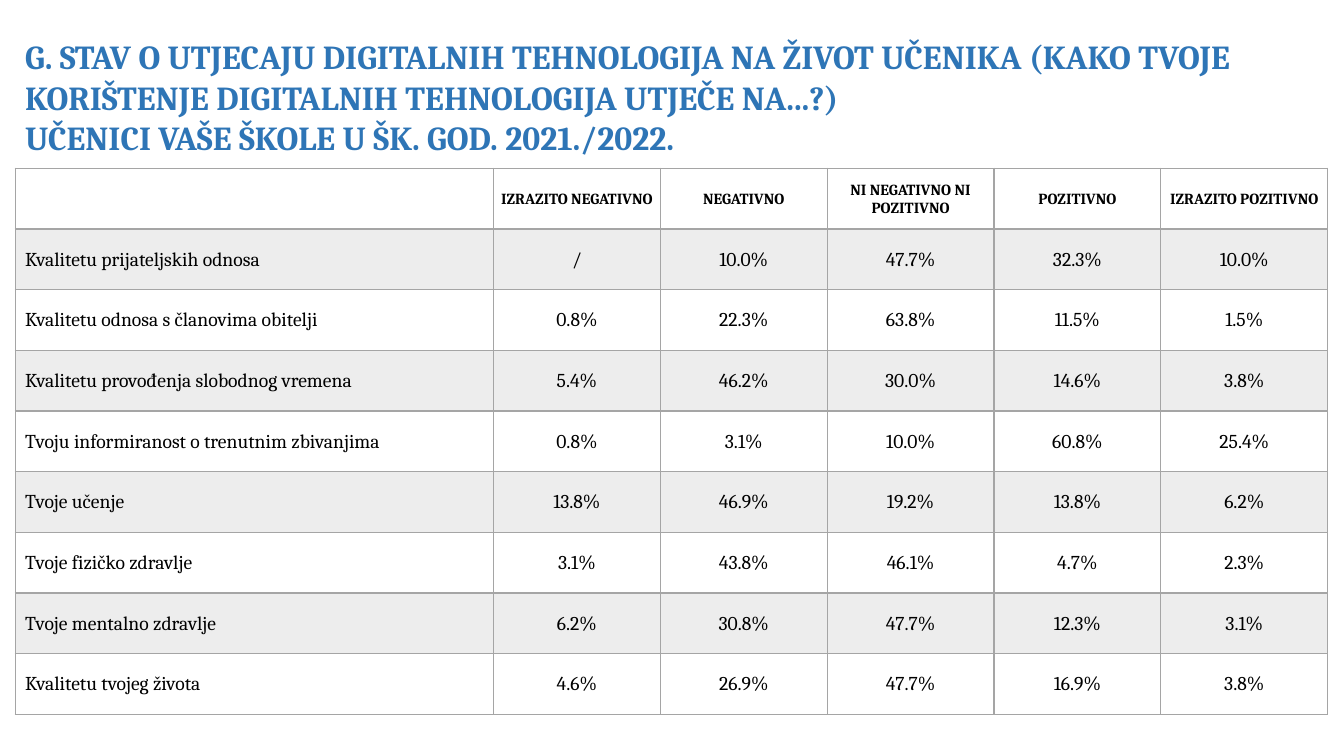
from lxml import etree
from pptx import Presentation
from pptx.dml.color import RGBColor
from pptx.enum.text import MSO_ANCHOR, PP_ALIGN
from pptx.oxml.ns import qn
from pptx.util import Inches, Pt

LEFT, CENTER = PP_ALIGN.LEFT, PP_ALIGN.CENTER
MIDDLE = MSO_ANCHOR.MIDDLE

FONT = "Cambria"
BLUE, BLACK, WHITE = "2E75B6", "000000", "FFFFFF"
GRID, BAND = "A5A5A5", "EDEDED"

TITLE = [
    "G. STAV O UTJECAJU DIGITALNIH TEHNOLOGIJA NA ŽIVOT UČENIKA "
    "(KAKO TVOJE KORIŠTENJE DIGITALNIH TEHNOLOGIJA UTJEČE NA...?)",
    "UČENICI VAŠE ŠKOLE U ŠK. GOD. 2021./2022.",
]
ANSWERS = [
    ["", "IZRAZITO NEGATIVNO", "NEGATIVNO", "NI NEGATIVNO NI POZITIVNO",
     "POZITIVNO", "IZRAZITO POZITIVNO"],
    ["Kvalitetu prijateljskih odnosa", "/", "10.0%", "47.7%", "32.3%", "10.0%"],
    ["Kvalitetu odnosa s članovima obitelji", "0.8%", "22.3%", "63.8%", "11.5%", "1.5%"],
    ["Kvalitetu provođenja slobodnog vremena", "5.4%", "46.2%", "30.0%", "14.6%", "3.8%"],
    ["Tvoju informiranost o trenutnim zbivanjima", "0.8%", "3.1%", "10.0%", "60.8%", "25.4%"],
    ["Tvoje učenje", "13.8%", "46.9%", "19.2%", "13.8%", "6.2%"],
    ["Tvoje fizičko zdravlje", "3.1%", "43.8%", "46.1%", "4.7%", "2.3%"],
    ["Tvoje mentalno zdravlje", "6.2%", "30.8%", "47.7%", "12.3%", "3.1%"],
    ["Kvalitetu tvojeg života", "4.6%", "26.9%", "47.7%", "16.9%", "3.8%"],
]


def color(value):
    return RGBColor.from_string(value)


def format_font(font, fill, **values):
    for name, value in {"name": FONT, **values}.items():
        setattr(font, name, value)
    font.color.rgb = color(fill)


def add_title(page, lines):
    box = page.shapes.add_textbox(Inches(0.15), Inches(0.31), Inches(12.48), Inches(1.31))
    box.text_frame.word_wrap = True
    box.text_frame.text = "\n".join(lines)
    for para in box.text_frame.paragraphs:
        format_font(para.font, BLUE, size=Pt(24), bold=True)


def add_borders(cell, bottom):
    properties = cell._tc.get_or_add_tcPr()
    for side, width in {"lnL": 1, "lnR": 1, "lnT": 1, "lnB": bottom}.items():
        line = etree.SubElement(properties, qn(f"a:{side}"), w=str(Pt(width)))
        fill = etree.SubElement(line, qn("a:solidFill"))
        etree.SubElement(fill, qn("a:srgbClr"), val=GRID)


def fill_cell(cell, text, row, column):
    header = row == 0
    cell.text = text
    margins = {
        "margin_left": Inches(0.01 if header or column else 0.1),
        "margin_right": Inches(0.01),
        "margin_top": Inches(0.01),
        "margin_bottom": 0,
        "vertical_anchor": MIDDLE,
    }
    for name, value in margins.items():
        setattr(cell, name, value)
    para = cell.text_frame.paragraphs[0]
    para.alignment = CENTER if column else LEFT
    format_font(para.font, BLACK, size=Pt(11 if header else 14), bold=header)
    # Borders come before the fill in the cell properties
    add_borders(cell, 2 if header else 1)
    cell.fill.solid()
    cell.fill.fore_color.rgb = color(BAND if row % 2 else WHITE)


def add_answer_table(page, rows):
    frame = page.shapes.add_table(len(rows), len(rows[0]), Inches(0.15), Inches(1.67),
                                  Inches(13.02), Inches(5.42))
    table = frame.table
    for index, column in enumerate(table.columns):
        column.width = Inches(1.655 if index else 4.745)
    for row, texts in enumerate(rows):
        for column, text in enumerate(texts):
            fill_cell(table.cell(row, column), text, row, column)


def main():
    deck = Presentation()
    deck.slide_width, deck.slide_height = Inches(13.33), Inches(7.5)
    page = deck.slides.add_slide(deck.slide_layouts[6])
    # Heading
    add_title(page, TITLE)
    # Share of answers per question
    add_answer_table(page, ANSWERS)
    deck.save("out.pptx")


if __name__ == "__main__":
    main()
